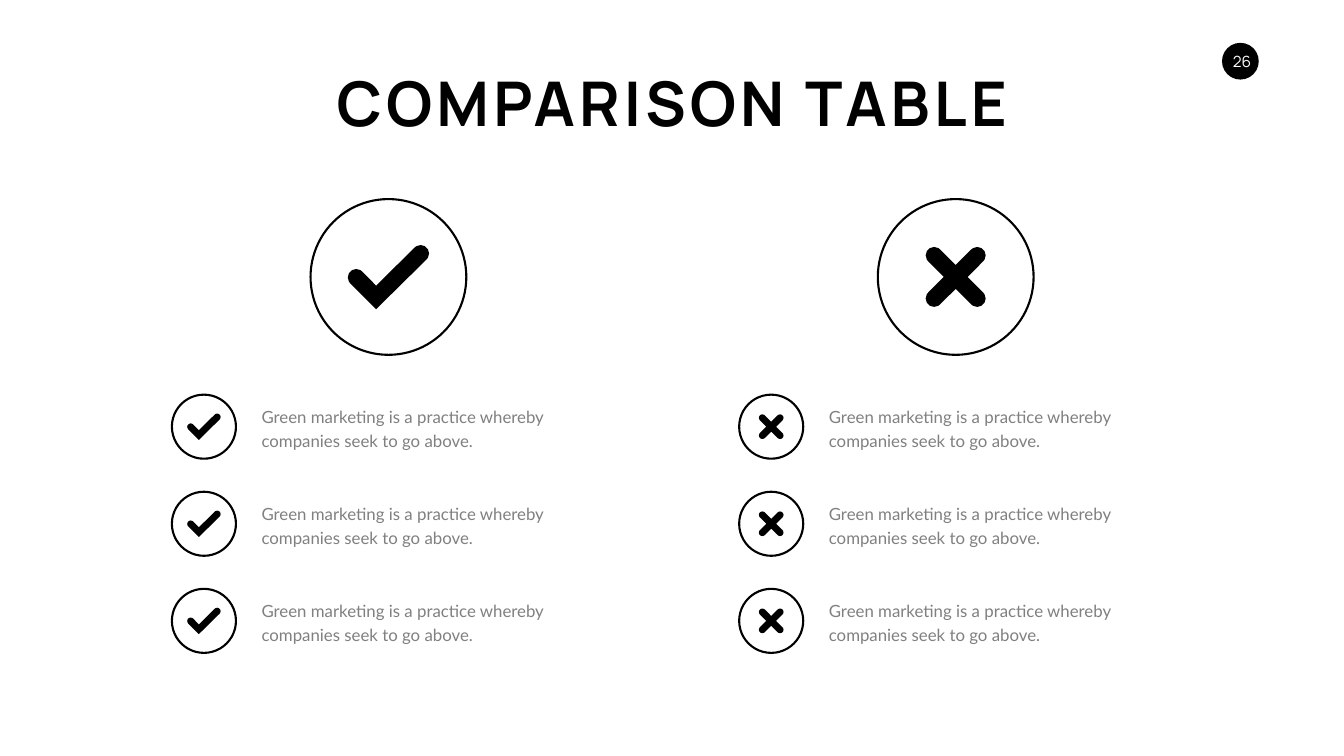
from math import cos, radians, sin, sqrt

from lxml import etree
from pptx import Presentation
from pptx.dml.color import RGBColor
from pptx.enum import shapes, text
from pptx.oxml.ns import qn
from pptx.util import Pt

COLORS = {"ink": "000000", "paper": "FFFFFF", "muted": "808080"}
HEAD_FONT, BODY_FONT = "Manrope", "Lato"
ITEMS = ["Green marketing is a practice whereby companies seek to go above."] * 3

COLUMN_LEFTS, COLUMN_TOP = (245.5, 1055.7), 284.4
BIG, SMALL = 222.5, 91.5
BIG_DX, ITEMS_DY, ITEM_STEP = 198, 279.4, 138.7
CAP = 0.054  # half the stroke of a mark, as a share of its circle


def color(name):
    return RGBColor.from_string(COLORS[name])


def add_run(p, content, font, size, ink):
    r = p.add_run()
    r.text = content
    r.font.name, r.font.size = font, Pt(size)
    r.font.color.rgb = color(ink)
    return r


def cap(x, y, start):
    """Clockwise half circle: each node is x, y and the (angle, sweep) leading to it."""
    nodes, angle = [], start
    for sweep in (0, 45, 90, 45):
        end = radians(angle + sweep)
        arc = (angle % 360, sweep) if sweep else None
        nodes.append((x + CAP * cos(end), y + CAP * sin(end), arc))
        angle += sweep
    return nodes


def check_nodes():
    return (cap(-0.207, 0.003, 135) + [(-0.079, 0.056, None)]
            + cap(0.207, -0.151, 225) + [(-0.079, 0.207, None)])


def cross_nodes():
    nodes = []
    reach, notch = 0.1385 * sqrt(2), CAP * sqrt(2)
    for angle in (45, 135, 225, 315):
        a, n = radians(angle), radians(angle - 45)
        nodes.append((notch * cos(n), notch * sin(n), None))
        nodes += cap(reach * cos(a), reach * sin(a), angle - 90)
    return nodes


def add_circle(s, left, top, size, fill):
    sp = s.shapes.add_shape(shapes.MSO_SHAPE.OVAL, Pt(left), Pt(top), Pt(size), Pt(size))
    sp.shadow.inherit = False
    sp.fill.solid()
    sp.fill.fore_color.rgb = color(fill)
    return sp


def round_caps(mark, nodes, radius):
    """Turn the straight steps of the caps into arcs."""
    path = mark._element.find(".//" + qn("a:path"))
    for step, (_, _, arc) in zip(list(path), nodes):
        if arc:
            start, sweep = arc
            curve = etree.Element(qn("a:arcTo"), wR=str(radius), hR=str(radius),
                                  stAng=str(start * 60000), swAng=str(sweep * 60000))
            path.replace(step, curve)


def add_badge(s, left, top, size, nodes):
    """Ringed circle with a mark, whose nodes are shares of the circle's size."""
    ring = add_circle(s, left, top, size, "paper")
    ring.line.color.rgb = color("ink")
    ring.line.width = Pt(3)

    cx, cy = left + size / 2, top + size / 2
    outline = [(Pt(cx + x * size), Pt(cy + y * size)) for x, y, _ in nodes]
    builder = s.shapes.build_freeform(*outline[0])
    builder.add_line_segments(outline[1:], close=True)
    mark = builder.convert_to_shape()
    round_caps(mark, nodes, Pt(CAP * size))
    mark.shadow.inherit = False
    mark.fill.solid()
    mark.fill.fore_color.rgb = color("ink")
    mark.line.fill.background()


def add_item(s, left, top, nodes, content):
    add_badge(s, left, top, SMALL, nodes)
    box = s.shapes.add_textbox(Pt(left + 121), Pt(top + 8.5), Pt(497.5), Pt(74))
    tf = box.text_frame
    tf.word_wrap = True
    tf.auto_size = text.MSO_AUTO_SIZE.SHAPE_TO_FIT_TEXT
    tf.vertical_anchor = text.MSO_ANCHOR.MIDDLE
    p = tf.paragraphs[0]
    p.line_spacing, p.space_before = Pt(35), Pt(4.8)
    add_run(p, content, BODY_FONT, 24, "muted")


def add_column(s, left, top, nodes, items):
    add_badge(s, left + BIG_DX, top, BIG, nodes)
    for i, content in enumerate(items):
        add_item(s, left, top + ITEMS_DY + i * ITEM_STEP, nodes, content)


def add_title(s, left, top, width, height):
    sp = s.shapes.title
    sp.left, sp.top, sp.width, sp.height = Pt(left), Pt(top), Pt(width), Pt(height)
    tf = sp.text_frame
    tf.word_wrap = False
    tf.auto_size = text.MSO_AUTO_SIZE.SHAPE_TO_FIT_TEXT
    tf.vertical_anchor = text.MSO_ANCHOR.TOP
    p = tf.paragraphs[0]
    p.alignment = text.PP_ALIGN.CENTER
    r = add_run(p, "COMPARISON TABLE", HEAD_FONT, 88, "ink")
    r.font.bold = True
    r.font._element.set("spc", "600")


def add_page_number(s, left, top, size):
    sp = add_circle(s, left, top, size, "ink")
    sp.line.fill.background()
    tf = sp.text_frame
    tf.word_wrap = False
    tf.vertical_anchor = text.MSO_ANCHOR.MIDDLE
    tf.margin_top = tf.margin_right = tf.margin_bottom = Pt(3.6)
    tf.margin_left = Pt(8)
    p = tf.paragraphs[0]
    p.alignment = text.PP_ALIGN.CENTER
    add_run(p, "26", HEAD_FONT, 22, "paper")


def main():
    prs = Presentation()
    prs.slide_width, prs.slide_height = Pt(1919.5), Pt(1080)
    s = prs.slides.add_slide(prs.slide_layouts[5])
    add_page_number(s, 1745.3, 61.2, 52.5)
    add_title(s, 453.5, 89, 1013, 114)
    for left, nodes in zip(COLUMN_LEFTS, (check_nodes(), cross_nodes())):
        add_column(s, left, COLUMN_TOP, nodes, ITEMS)
    prs.save("out.pptx")


if __name__ == "__main__":
    main()
